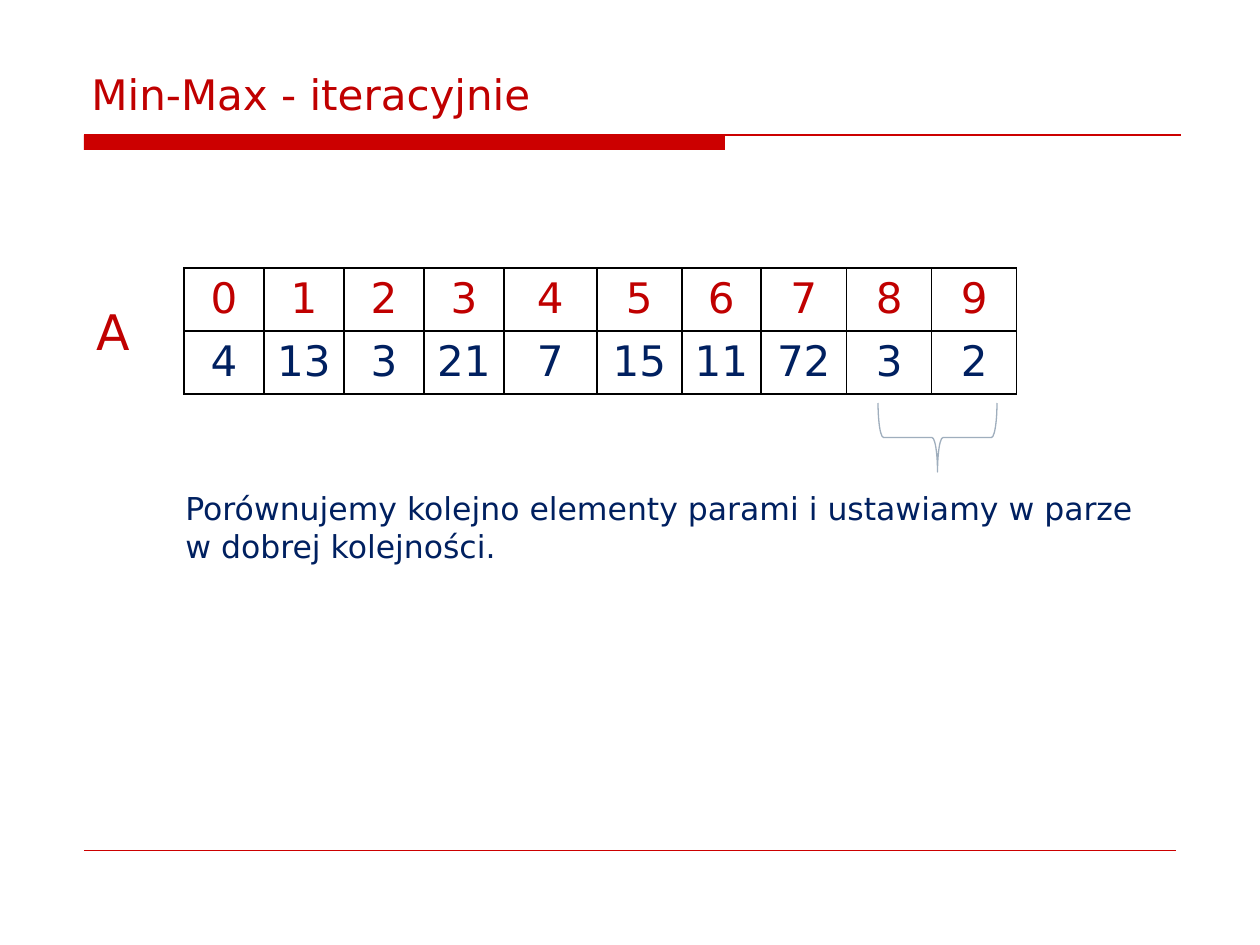
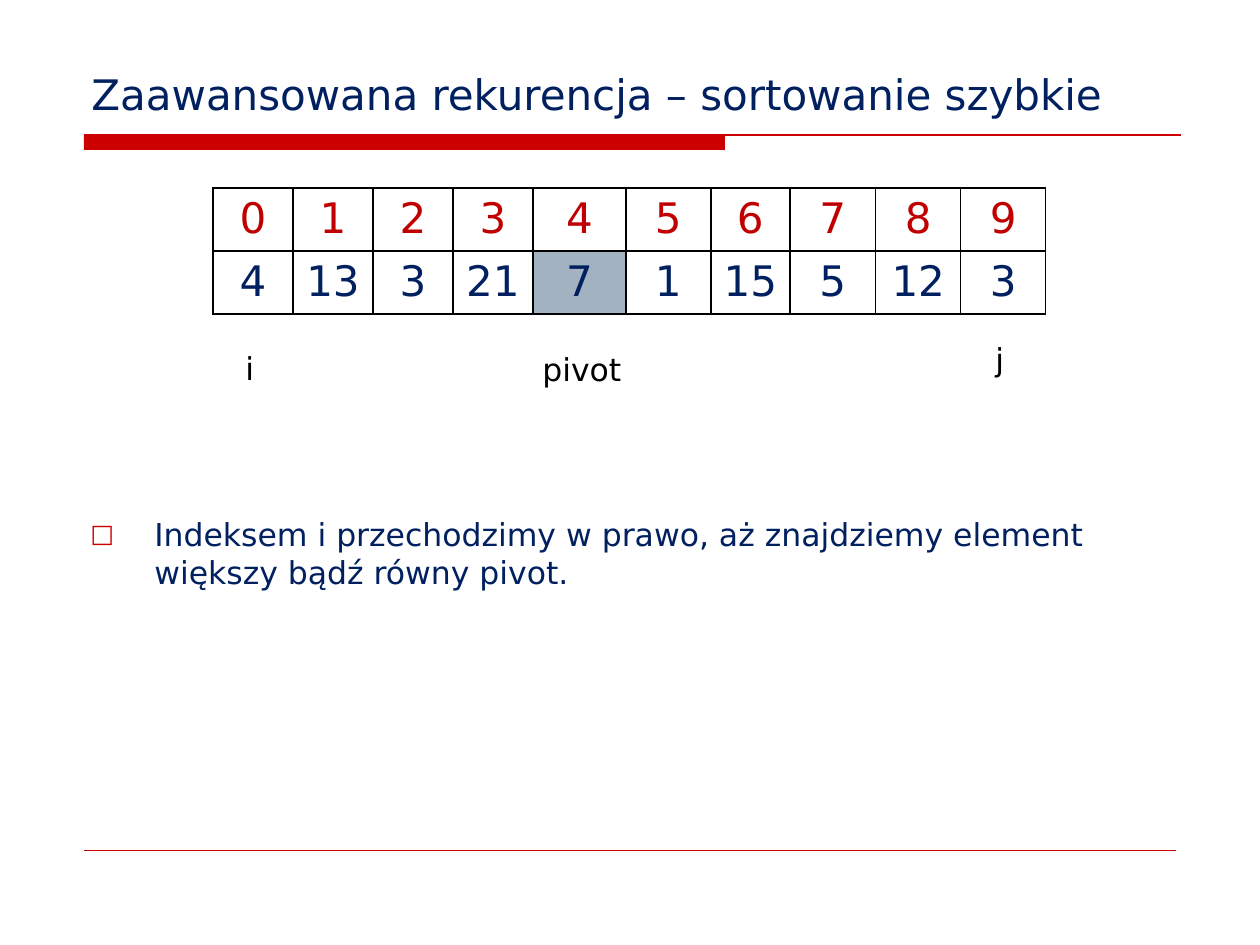
from pptx import Presentation
from pptx.dml.color import RGBColor
from pptx.enum.shapes import MSO_CONNECTOR as Connector, MSO_SHAPE as Shape
from pptx.enum.text import MSO_ANCHOR as Anchor, PP_ALIGN as Align
from pptx.oxml.ns import qn
from pptx.util import Pt
from lxml.etree import SubElement

PX = 914400 / 126
FONT = "DejaVu Sans"
BAND_RED, TEXT_RED, NAVY, BLACK = "CC0000", "C00000", "002060", "000000"
BRACE_GREY, PIVOT_GREY = "9FAEBD", "A3B2C1"
COLUMN_WIDTHS = [80, 80, 80, 80, 93, 85, 79, 86, 85, 85]
ROW_HEIGHT = 61


def emu(*lengths):
    return [round(length * PX) for length in lengths]


def color(value):
    return RGBColor.from_string(value)


def add_bullet(para, symbol, indent):
    properties = para._p.get_or_add_pPr()
    hanging = emu(indent)[0]
    properties.set("marL", str(hanging))
    properties.set("indent", str(-hanging))
    bullet_color = SubElement(properties, qn("a:buClr"))
    SubElement(bullet_color, qn("a:srgbClr"), val=BAND_RED)
    SubElement(properties, qn("a:buSzPct"), val="80000")
    SubElement(properties, qn("a:buFont"), typeface=FONT)
    SubElement(properties, qn("a:buChar"), char=symbol)


def write(frame, text, size=18, fill=NAVY, align=None, bullet=None, indent=0):
    for number, line in enumerate(text.split("\n")):
        para = frame.add_paragraph() if number else frame.paragraphs[0]
        para.alignment = align
        if bullet:
            add_bullet(para, bullet, indent)
        span = para.add_run()
        span.text = line
        span.font.name = FONT
        span.font.size = Pt(size)
        span.font.color.rgb = color(fill)


def add_text(page, box, text, wrap=False, anchor=Anchor.TOP, **style):
    frame = page.shapes.add_textbox(*emu(*box)).text_frame
    frame.word_wrap = wrap
    frame.vertical_anchor = anchor
    write(frame, text, **style)


def add_rule(page, start, end, width):
    rule = page.shapes.add_connector(Connector.STRAIGHT, *emu(*start, *end))
    rule.line.color.rgb = color(BAND_RED)
    rule.line.width = Pt(width)
    SubElement(rule._element.spPr, qn("a:effectLst"))


def add_page(deck, title, title_color):
    page = deck.slides.add_slide(deck.slide_layouts[6])
    band = page.shapes.add_shape(Shape.RECTANGLE, *emu(84, 135, 641, 15))
    band.shadow.inherit = False
    band.fill.solid()
    band.fill.fore_color.rgb = color(BAND_RED)
    band.line.fill.background()
    add_rule(page, (84, 135), (1181, 135), 0.75)
    add_rule(page, (84, 850), (1176, 850), 0.25)
    add_text(page, (79, 42, 1102, 83), title, wrap=True, anchor=Anchor.BOTTOM,
             size=24, fill=title_color)
    return page


def add_borders(cell):
    properties = cell._tc.get_or_add_tcPr()
    for side in "LRTB":
        border = SubElement(properties, qn(f"a:ln{side}"), w=str(Pt(1)))
        paint = SubElement(border, qn("a:solidFill"))
        SubElement(paint, qn("a:srgbClr"), val=BLACK)


def add_array(page, left, top, values, pivot=None):
    rows = [range(len(values)), values]
    box = emu(left, top, sum(COLUMN_WIDTHS), ROW_HEIGHT * len(rows))
    table = page.shapes.add_table(len(rows), len(values), *box).table
    table.first_row = table.horz_banding = False
    for column, width in zip(table.columns, emu(*COLUMN_WIDTHS)):
        column.width = width
    for row_number, (row, ink) in enumerate(zip(rows, (TEXT_RED, NAVY))):
        table.rows[row_number].height = emu(ROW_HEIGHT)[0]
        for index, value in enumerate(row):
            cell = table.cell(row_number, index)
            cell.margin_left = cell.margin_right = emu(6)[0]
            add_borders(cell)
            if row_number == 1 and index == pivot:
                cell.fill.solid()
                cell.fill.fore_color.rgb = color(PIVOT_GREY)
            else:
                cell.fill.background()
            write(cell.text_frame, str(value), size=24, fill=ink, align=Align.CENTER)


def add_pair_brace(page, left, top, width, height):
    box = (left + (width - height) / 2, top + (height - width) / 2, height, width)
    brace = page.shapes.add_shape(Shape.RIGHT_BRACE, *emu(*box))
    brace.rotation = 90
    brace.adjustments[0] = 0.08
    brace.adjustments[1] = 0.5
    brace.shadow.inherit = False
    brace.fill.background()
    brace.line.color.rgb = color(BRACE_GREY)
    brace.line.width = Pt(0.75)


def add_min_max(deck):
    page = add_page(deck, "Min-Max - iteracyjnie", TEXT_RED)
    left, top = 184, 268
    add_array(page, left, top, [4, 13, 3, 21, 7, 15, 11, 72, 3, 2])
    add_pair_brace(page, left + 694, top + 135, 119, 69)
    add_text(page, (left - 100, top + 27, 59, 72), "A", size=28, fill=TEXT_RED)
    add_text(page, (left - 11, top + 215, 1000, 89),
             "Porównujemy kolejno elementy parami i ustawiamy w parze\n"
             "w dobrej kolejności.")


def add_quick_sort(deck):
    page = add_page(deck, "Zaawansowana rekurencja – sortowanie szybkie", NAVY)
    left, top = 213, 188
    add_array(page, left, top, [4, 13, 3, 21, 7, 1, 15, 5, 12, 3], pivot=4)
    markers = [("i", 20, 155, 34), ("j", 770, 146, 36), ("pivot", 317, 156, 105)]
    for name, across, down, width in markers:
        add_text(page, (left + across, top + down, width, 50), name, fill=BLACK)
    add_text(page, (78, 509, 1102, 330),
             "Indeksem i przechodzimy w prawo, aż znajdziemy element "
             "większy bądź równy pivot.", wrap=True, bullet="□", indent=64)


def main():
    deck = Presentation()
    deck.slide_width, deck.slide_height = emu(1260, 945)
    add_min_max(deck)
    add_quick_sort(deck)
    deck.save("out.pptx")


if __name__ == "__main__":
    main()
